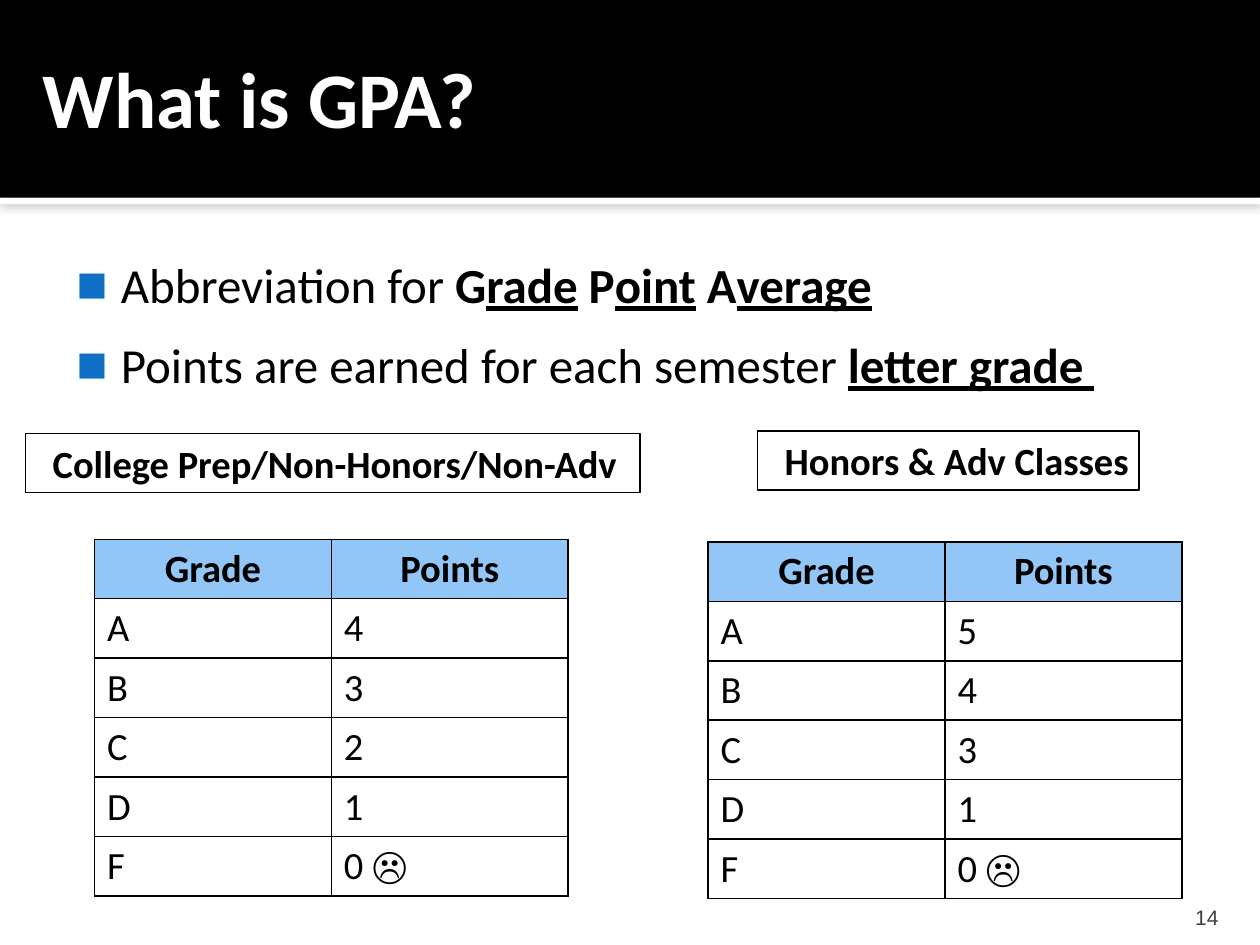
from lxml.etree import SubElement
from pptx import Presentation
from pptx.dml.color import RGBColor
from pptx.enum.shapes import MSO_SHAPE
from pptx.enum.text import MSO_ANCHOR, MSO_AUTO_SIZE, PP_ALIGN
from pptx.oxml import parse_xml
from pptx.oxml.ns import nsdecls, qn
from pptx.util import Inches, Pt


def paint(obj, color):
    """Fill a shape or cell with a solid colour."""
    obj.fill.solid()
    obj.fill.fore_color.rgb = RGBColor.from_string(color)


def style(font, size, color="000000", bold=None, name="Calibri"):
    """Set the look of a font."""
    font.size, font.bold, font.name = Pt(size), bold, name
    font.color.rgb = RGBColor.from_string(color)


def place(shape, left, top, width, height):
    """Move and size a shape, in inches."""
    shape.left, shape.top = Inches(left), Inches(top)
    shape.width, shape.height = Inches(width), Inches(height)


def inset(frame, left, top, right, bottom):
    """Set the text margins, in inches."""
    frame.margin_left, frame.margin_top = Inches(left), Inches(top)
    frame.margin_right, frame.margin_bottom = Inches(right), Inches(bottom)
    frame.word_wrap, frame.auto_size = True, MSO_AUTO_SIZE.NONE


def add_rect(slide, left, top, width, height):
    """Add a plain rectangle without line or shadow."""
    rect = slide.shapes.add_shape(
        MSO_SHAPE.RECTANGLE, *map(Inches, (left, top, width, height)))
    rect.shadow.inherit = False
    rect.line.fill.background()
    return rect


def add_band(slide, top, height, color):
    """Add a full-width band behind everything else."""
    band = add_rect(slide, 0, top, 10, height)
    paint(band, color)
    band.element.getparent().insert(2, band.element)
    return band


def add_shade(shape):
    """Cast a soft grey shadow downwards."""
    effect = shape.element.spPr.find(qn("a:effectLst"))
    effect.append(parse_xml(
        f'<a:outerShdw {nsdecls("a")} blurRad="63500" dist="10160" '
        'dir="5400000" rotWithShape="0"><a:srgbClr val="808080">'
        '<a:alpha val="59000"/></a:srgbClr></a:outerShdw>'))


def set_title(slide, text):
    """Fill the title placeholder."""
    title = slide.shapes.title
    place(title, 0.24, -0.01, 9.27, 1.56)
    frame = title.text_frame
    inset(frame, 0.1, 0.05, 0.05, 0.05)
    frame.vertical_anchor = MSO_ANCHOR.MIDDLE
    para = frame.paragraphs[0]
    para.text, para.alignment = text, PP_ALIGN.LEFT
    style(para.font, 45, "FFFFFF", True)


def add_bullet(para):
    """Give a paragraph a hanging blue square bullet."""
    props = para._p.get_or_add_pPr()
    props.set("marL", str(Inches(0.48)))
    props.set("indent", str(Inches(-0.35)))
    color = SubElement(props, qn("a:buClr"))
    SubElement(color, qn("a:srgbClr"), val="0F6FC6")
    SubElement(props, qn("a:buFont"), typeface="Arial")
    SubElement(props, qn("a:buChar"), char="◼")


def set_list(slide, items):
    """Fill the body with bullets made of (text, bold, underline) runs."""
    body = slide.placeholders[1]
    place(body, 0.42, 1.75, 9.58, 3)
    frame = body.text_frame
    inset(frame, 0.06, 0.27, 0.1, 0.05)
    for num, item in enumerate(items):
        para = frame.paragraphs[0] if num == 0 else frame.add_paragraph()
        para.space_before, para.space_after = Pt(0), Pt(12)
        add_bullet(para)
        for text, bold, under in item:
            run = para.add_run()
            run.text = text
            style(run.font, 28, bold=bold)
            run.font.underline = under


def add_label(slide, left, top, width, text):
    """Add an outlined heading for a table."""
    box = add_rect(slide, left, top, width, 0.47)
    box.fill.background()
    box.line.color.rgb = RGBColor.from_string("000000")
    box.line.width = Pt(0.75)
    frame = box.text_frame
    inset(frame, 0.1, 0.05, 0, 0.05)
    frame.vertical_anchor = MSO_ANCHOR.TOP
    para = frame.paragraphs[0]
    para.text, para.alignment = text, PP_ALIGN.LEFT
    para._p.get_or_add_pPr().set("marL", str(Inches(0.12)))
    style(para.font, 22, bold=True)


def add_edges(cell):
    """Draw thin black borders round a cell."""
    props = cell._tc.get_or_add_tcPr()
    for num, side in enumerate(("lnL", "lnR", "lnT", "lnB")):
        props.insert(num, parse_xml(
            f'<a:{side} {nsdecls("a")} w="12700"><a:solidFill>'
            f'<a:srgbClr val="000000"/></a:solidFill></a:{side}>'))


def add_grades(slide, left, top, points):
    """Add a table of grades and their points."""
    rows = [("Grade", "Points"), *zip("ABCDF", points)]
    size = map(Inches, (left, top, 3.76, 0.47 * len(rows)))
    table = slide.shapes.add_table(len(rows), 2, *size).table
    for col in table.columns:
        col.width = Inches(1.88)
    for y, row in enumerate(rows):
        for x, text in enumerate(row):
            cell, head = table.cell(y, x), y == 0
            if head:
                paint(cell, "91C6F7")
            else:
                cell.fill.background()
            add_edges(cell)
            para = cell.text_frame.paragraphs[0]
            para.text = text
            para.alignment = PP_ALIGN.CENTER if head else PP_ALIGN.LEFT
            style(para.font, 22, bold=head)


def add_number(slide, text):
    """Add the page number at the lower right."""
    box = slide.shapes.add_textbox(*map(Inches, (8.97, 7.08, 0.8, 0.3)))
    frame = box.text_frame
    inset(frame, 0.1, 0.05, 0.1, 0)
    frame.vertical_anchor = MSO_ANCHOR.BOTTOM
    para = frame.paragraphs[0]
    para.text, para.alignment = text, PP_ALIGN.RIGHT
    style(para.font, 12, "3F3F3F", name="Arial")


def main():
    """Build the slide and save it."""
    deck = Presentation()
    deck.slide_width, deck.slide_height = Inches(10), Inches(7.5)
    slide = deck.slides.add_slide(deck.slide_layouts[1])
    add_band(slide, 0, 1.57, "000000")
    add_shade(add_band(slide, 1.57, 0.05, "FFFFFF"))
    set_title(slide, "What is GPA?")
    set_list(slide, [
        [("Abbreviation for ", False, False), ("G", True, False),
         ("rade", True, True), (" P", True, False), ("oint", True, True),
         (" A", True, False), ("verage", True, True)],
        [("Points are earned for each semester ", False, False),
         ("letter grade ", True, True)],
    ])
    add_number(slide, "14")
    add_label(slide, 0.2, 3.44, 4.88, "College Prep/Non-Honors/Non-Adv")
    add_label(slide, 6.01, 3.42, 3.03, "Honors & Adv Classes")
    add_grades(slide, 0.75, 4.28, ("4", "3", "2", "1", "0 ☹"))
    add_grades(slide, 5.62, 4.3, ("5", "4", "3", "1", "0 ☹"))
    deck.save("out.pptx")


if __name__ == "__main__":
    main()
